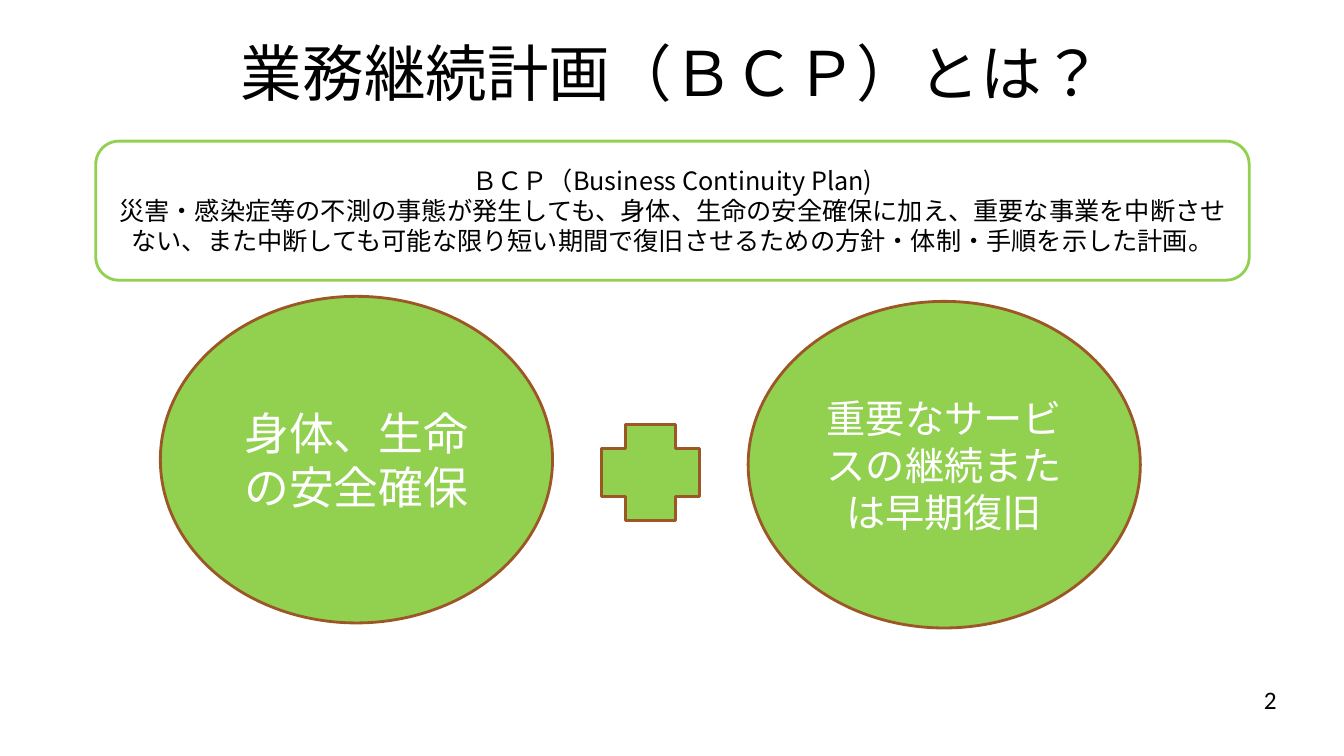
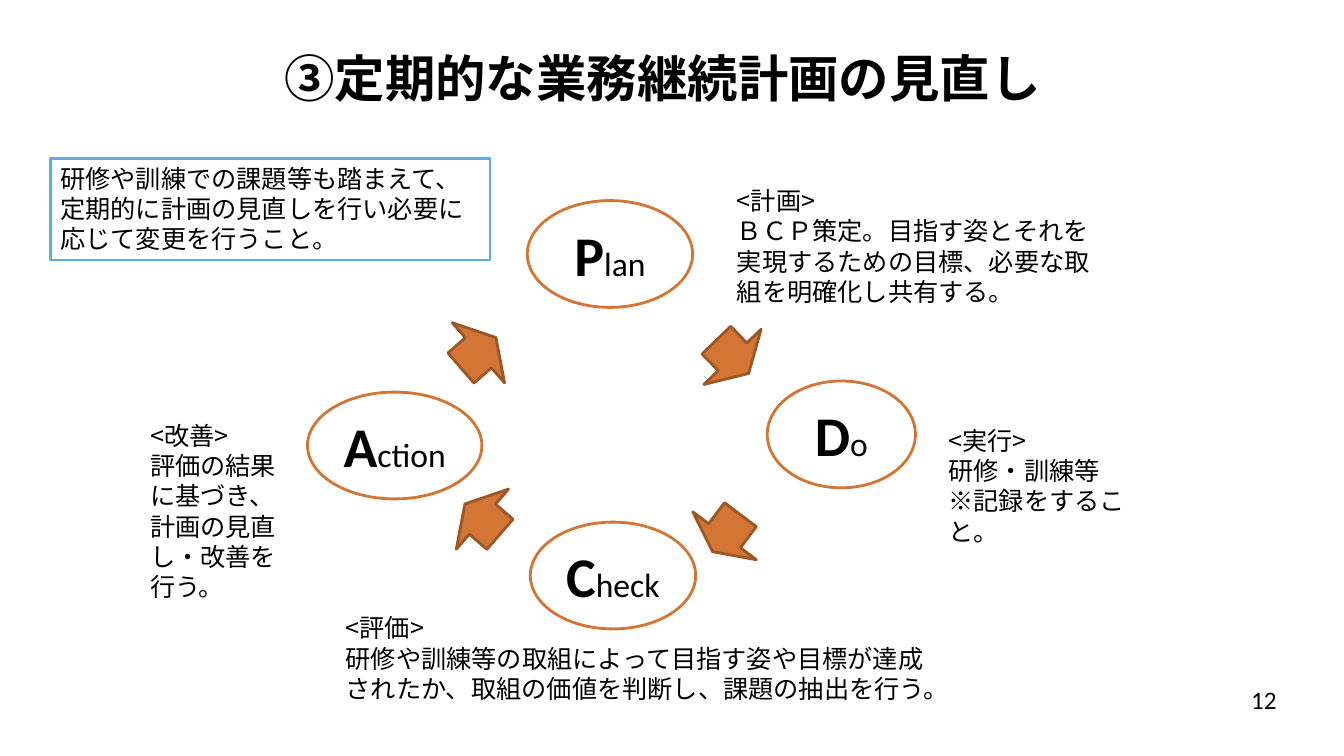
from dataclasses import dataclass

from pptx import Presentation
from pptx.dml.color import RGBColor
from pptx.enum.lang import MSO_LANGUAGE_ID
from pptx.enum.shapes import MSO_SHAPE
from pptx.enum.text import MSO_ANCHOR, PP_ALIGN
from pptx.oxml.ns import qn
from pptx.util import Pt

OVAL = MSO_SHAPE.OVAL
RECT = MSO_SHAPE.RECTANGLE
ROUND = MSO_SHAPE.ROUNDED_RECTANGLE
PLUS = MSO_SHAPE.CROSS
ARROW = MSO_SHAPE.DOWN_ARROW
TOP, MID = MSO_ANCHOR.TOP, MSO_ANCHOR.MIDDLE
LEFT, MIDDLE, RIGHT = PP_ALIGN.LEFT, PP_ALIGN.CENTER, PP_ALIGN.RIGHT
JAPAN = MSO_LANGUAGE_ID.JAPANESE
PX = 9144


@dataclass(frozen=True)
class Theme:
    black: str = "000000"
    white: str = "FFFFFF"
    green: str = "92D050"
    orange: str = "D37534"
    brown: str = "9C5726"
    blue: str = "5BADE5"
    latin: str = "Calibri"
    asian: str = "Noto Sans CJK JP"
    body: int = 18
    small: int = 24
    big: int = 40
    stroke: int = 2
    pitch: float = 1.2


T = Theme()


def draw(slide, kind, at, fill=None, line=None):
    box = [n * PX for n in at]
    if kind is None:
        return slide.shapes.add_textbox(*box)
    shape = slide.shapes.add_shape(kind, *box)
    shape.shadow.inherit = False
    if fill:
        shape.fill.solid()
        shape.fill.fore_color.rgb = RGBColor.from_string(fill)
    else:
        shape.fill.background()
    shape.line.color.rgb = RGBColor.from_string(line)
    shape.line.width = Pt(T.stroke)
    return shape


def write(shape, paras, align=LEFT, anchor=TOP, face=T.asian, color=T.black, pitch=None):
    frame = shape.text_frame
    frame.word_wrap = True
    frame.vertical_anchor = anchor
    for i, runs in enumerate(paras):
        para = frame.paragraphs[0] if i == 0 else frame.add_paragraph()
        para.alignment = align
        if pitch:
            para.line_spacing = Pt(runs[0][1] * pitch)
        for text, size, bold in runs:
            run = para.add_run()
            run.text = text
            font = run.font
            font.size, font.bold, font.name = Pt(size), bold, face
            font.language_id = JAPAN
            font.color.rgb = RGBColor.from_string(color)
            east = run._r.get_or_add_rPr().makeelement(qn("a:ea"), {"typeface": T.asian})
            run._r.rPr.find(qn("a:latin")).addnext(east)


deck = Presentation()
deck.slide_width, deck.slide_height = 1333 * PX, 750 * PX

slides = []
for title, at, size, bold, face, page in [
    ("業務継続計画（ＢＣＰ）とは？", (67, 30, 1200, 82), 44, False, T.latin, "2"),
    ("③定期的な業務継続計画の見直し", (57, 34, 1200, 85), 36, True, T.asian, "12"),
]:
    slide = deck.slides.add_slide(deck.slide_layouts[6])
    write(draw(slide, None, at), [[(title, size, bold)]], MIDDLE, MID, face)
    foot = draw(slide, None, (965, 674, 311, 40))
    write(foot, [[(page, T.body, False)]], RIGHT, MID, T.latin)
    slides.append(slide)
about, cycle = slides

lead = draw(about, ROUND, (95, 140, 1144, 138), line=T.green)
lines = [
    "ＢＣＰ（Business Continuity Plan)",
    "災害・感染症等の不測の事態が発生しても、身体、生命の安全確保に加え、重要な事業を中断させない、また中断しても可能な限り短い期間で復旧させるための方針・体制・手順を示した計画。",
]
write(lead, [[(s, T.body, False)] for s in lines], MIDDLE, MID, pitch=T.pitch)

for left, top, text, size in [
    (159, 294, "身体、生命の安全確保", 32),
    (742, 299, "重要なサービスの継続または早期復旧", 28),
]:
    goal = draw(about, OVAL, (left, top, 389, 324), T.green, T.brown)
    write(goal, [[(text, size, False)]], MIDDLE, MID, color=T.white, pitch=T.pitch)
draw(about, PLUS, (597, 421, 97, 95), T.green, T.brown)

note = draw(cycle, RECT, (50, 157, 436, 101), T.white, T.blue)
text = "研修や訓練での課題等も踏まえて、定期的に計画の見直しを行い必要に応じて変更を行うこと。"
write(note, [[(text, T.body, False)]], pitch=T.pitch)

for left, top, width, head, tail in [
    (526, 518, 164, "C", "heck"),
    (523, 199, 164, "P", "lan"),
    (761, 378, 147, "D", "o"),
    (305, 389, 173, "A", "ction"),
]:
    step = draw(cycle, OVAL, (left, top, width, 106), T.white, T.orange)
    word = [(head, T.big, True), (tail, T.small, False)]
    write(step, [word], MIDDLE, MID, T.latin)

for at, lines in [
    ((721, 179, 377, 131), ["<計画>", "ＢＣＰ策定。目指す姿とそれを実現するための目標、必要な取組を明確化し共有する。"]),
    ((333, 603, 598, 101), ["<評価>", "研修や訓練等の取組によって目指す姿や目標が達成されたか、取組の価値を判断し、課題の抽出を行う。"]),
    ((931, 417, 216, 101), ["<実行>", "研修・訓練等", "※記録をすること。"]),
    ((139, 412, 158, 192), ["<改善>", "評価の結果に基づき、計画の見直し・改善を行う。"]),
]:
    write(draw(cycle, None, at), [[(s, T.body, False)] for s in lines], pitch=T.pitch)

for left, top, turn, tip in [
    (687, 331, 316, 0.5),
    (439, 492, 131, 0.5),
    (681, 506, 37, 0.43),
    (435, 327, 229, 0.5),
]:
    arrow = draw(cycle, ARROW, (left, top, 79, 46), T.orange, T.brown)
    arrow.rotation = turn
    arrow.adjustments[1] = tip

deck.save("out.pptx")
